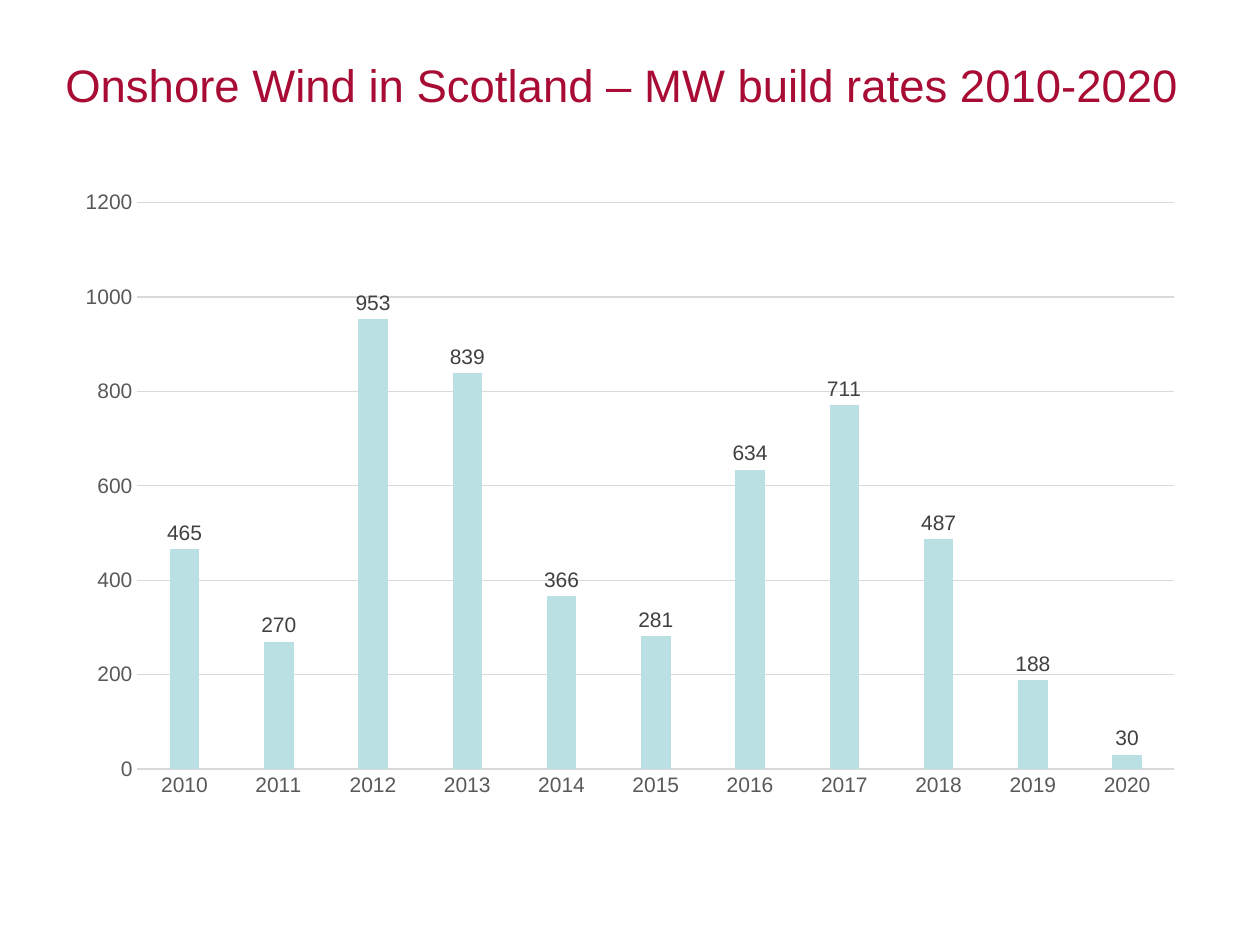
"""Build a slide charting onshore wind build rates in Scotland, 2010-2020."""
import dataclasses

import pptx
import pptx.chart.data
import pptx.dml.color
import pptx.enum.chart
import pptx.enum.text
import pptx.util

Inches = pptx.util.Inches
Pt = pptx.util.Pt
RGBColor = pptx.dml.color.RGBColor


@dataclasses.dataclass(frozen=True)
class Theme:
    font: str = "Arial"
    title_color: str = "A80C35"
    axis_color: str = "595959"
    label_color: str = "404040"
    line_color: str = "D9D9D9"
    bar_color: str = "BBE0E3"
    title_size: int = 26
    chart_size: int = 12


theme = Theme()


def style_font(font, size, color):
    font.name = theme.font
    font.size = Pt(size)
    font.color.rgb = RGBColor.from_string(color)


def style_line(line):
    line.color.rgb = RGBColor.from_string(theme.line_color)
    line.width = Pt(0.75)


build_rates = {
    2010: 465, 2011: 270, 2012: 953, 2013: 839, 2014: 366, 2015: 281,
    2016: 634, 2017: 771, 2018: 487, 2019: 188, 2020: 30,
}
label_overrides = {2017: "711"}

presentation = pptx.Presentation()
presentation.slide_width = Inches(10)
presentation.slide_height = Inches(7.5)
slide = presentation.slides.add_slide(presentation.slide_layouts[6])

title = slide.shapes.add_textbox(Inches(0.42), Inches(0.17), Inches(9.08), Inches(1))
title.text_frame.word_wrap = True
title.text_frame.vertical_anchor = pptx.enum.text.MSO_ANCHOR.MIDDLE
title.text_frame.text = "Onshore Wind in Scotland – MW build rates 2010-2020"
style_font(title.text_frame.paragraphs[0].runs[0].font, theme.title_size, theme.title_color)

chart_data = pptx.chart.data.CategoryChartData()
chart_data.categories = [str(year) for year in build_rates]
chart_data.add_series("Series 1", build_rates.values())
chart = slide.shapes.add_chart(
    pptx.enum.chart.XL_CHART_TYPE.COLUMN_CLUSTERED,
    Inches(0.5), Inches(1.42), Inches(9), Inches(5), chart_data,
).chart
chart.has_title = False
chart.has_legend = False
style_font(chart.font, theme.chart_size, theme.axis_color)

for axis in (chart.category_axis, chart.value_axis):
    axis.major_tick_mark = pptx.enum.chart.XL_TICK_MARK.NONE
    axis.minor_tick_mark = pptx.enum.chart.XL_TICK_MARK.NONE
    style_font(axis.tick_labels.font, theme.chart_size, theme.axis_color)
style_line(chart.category_axis.format.line)
chart.value_axis.format.line.fill.background()
chart.value_axis.minimum_scale = 0
chart.value_axis.maximum_scale = 1200
chart.value_axis.major_unit = 200
style_line(chart.value_axis.major_gridlines.format.line)

plot = chart.plots[0]
plot.vary_by_categories = False
plot.gap_width = 219
plot.overlap = -27
series = plot.series[0]
series.format.fill.solid()
series.format.fill.fore_color.rgb = RGBColor.from_string(theme.bar_color)

label_position = pptx.enum.chart.XL_LABEL_POSITION.OUTSIDE_END
series.data_labels.show_value = True
series.data_labels.position = label_position
style_font(series.data_labels.font, theme.chart_size, theme.label_color)
for index, year in enumerate(build_rates):
    if year in label_overrides:
        label = series.points[index].data_label
        label.text_frame.text = label_overrides[year]
        label.position = label_position
        run = label.text_frame.paragraphs[0].runs[0]
        style_font(run.font, theme.chart_size, theme.label_color)

presentation.save("out.pptx")
